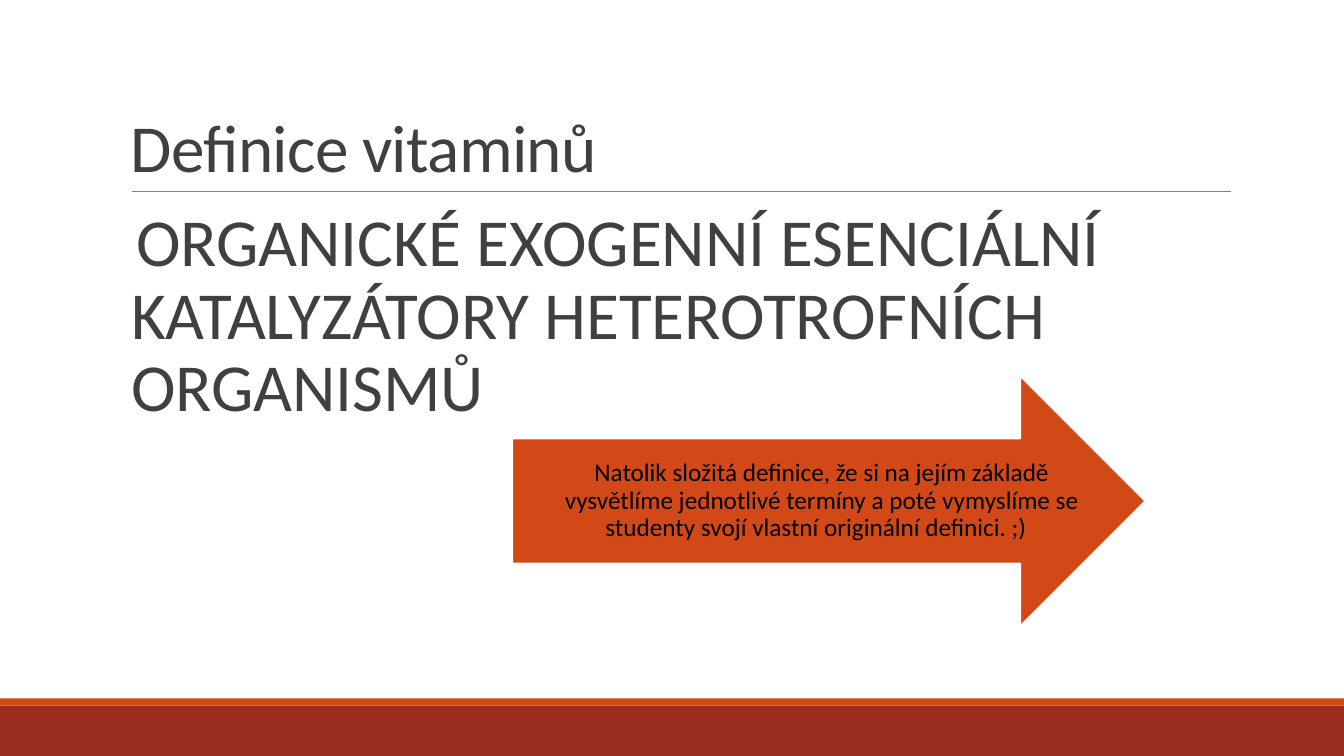
from lxml import etree
from pptx import Presentation, util as u
from pptx.dml.color import RGBColor
from pptx.enum import shapes, text
from pptx.oxml.ns import qn

WIDTH, HEIGHT = 13.33, 7.5
LEFT, COLUMN = 1.2, 11
RULE_Y = 1.9
BAND_TOP, STRIPE = 7, 0.07
ORANGE, DARK_RED, GREY = "D34817", "9B2D1F", "404040"

deck = Presentation()
deck.slide_width, deck.slide_height = u.Inches(WIDTH), u.Inches(HEIGHT)
page = deck.slides.add_slide(deck.slide_layouts[6])


def color(value):
    return RGBColor.from_string(value)


def add_text(place, wording, size, ink, anchor, insets, spacing):
    """Add a wrapped one-paragraph text box; return its paragraph and run."""
    box = page.shapes.add_textbox(*map(u.Inches, place))
    frame = box.text_frame
    frame.word_wrap = True
    frame.vertical_anchor = anchor
    side, edge = map(u.Inches, insets)
    frame.margin_left = frame.margin_right = side
    frame.margin_top = frame.margin_bottom = edge
    para = frame.paragraphs[0]
    para.line_spacing = spacing
    span = para.add_run()
    span.text = wording
    span.font.size = u.Pt(size)
    span.font.name = "Calibri"
    span.font.color.rgb = color(ink)
    return para, span


# Footer band with its stripe, and the arrow
rect, arrow = shapes.MSO_SHAPE.RECTANGLE, shapes.MSO_SHAPE.RIGHT_ARROW
for kind, place, fill, outline in (
    (rect, (0, BAND_TOP, WIDTH, HEIGHT - BAND_TOP), DARK_RED, None),
    (rect, (0, BAND_TOP - STRIPE, WIDTH, STRIPE), ORANGE, None),
    (arrow, (5.08, 3.73, 6.28, 2.48), ORANGE, "FFFFFF"),
):
    shape = page.shapes.add_shape(kind, *map(u.Inches, place))
    shape.shadow.inherit = False
    shape.fill.solid()
    shape.fill.fore_color.rgb = color(fill)
    if outline:
        shape.line.color.rgb = color(outline)
        shape.line.width = u.Pt(1.25)
    else:
        shape.line.fill.background()

# Rule under the title
rule = page.shapes.add_connector(
    shapes.MSO_CONNECTOR.STRAIGHT, *map(u.Inches, (1.31, RULE_Y, 12.21, RULE_Y)))
rule.line.color.rgb = color("808080")
rule.line.width = u.Pt(0.5)
etree.SubElement(rule._element.spPr, qn("a:effectLst"))

# Title
para, span = add_text((LEFT, 0.31, COLUMN, RULE_Y - 0.31), "Definice vitaminů",
                      48, GREY, text.MSO_ANCHOR.BOTTOM, (0.1, 0.05), 0.85)
span.font._element.set("spc", "-50")

# Definition, with a blank bullet and a hanging indent
para, span = add_text(
    (LEFT, 2.02, COLUMN, 4.4),
    "ORGANICKÉ EXOGENNÍ ESENCIÁLNÍ KATALYZÁTORY HETEROTROFNÍCH ORGANISMŮ",
    48, GREY, text.MSO_ANCHOR.TOP, (0, 0.05), 0.9)
para.space_before, para.space_after = u.Pt(12), u.Pt(2)
props = para._p.get_or_add_pPr()
props.set("marL", str(u.Inches(0.1)))
props.set("indent", str(-u.Inches(0.1)))
bullet_color = etree.SubElement(props, qn("a:buClr"))
etree.SubElement(bullet_color, qn("a:srgbClr"), val=ORANGE)
etree.SubElement(props, qn("a:buFont"), typeface="Calibri")
etree.SubElement(props, qn("a:buChar"), char=" ")

# Arrow text
para, span = add_text(
    (5.58, 4.35, 5.14, 1.24),
    "Natolik složitá definice, že si na jejím základě vysvětlíme jednotlivé "
    "termíny a poté vymyslíme se studenty svojí vlastní originální definici. ;)  ",
    18, "000000", text.MSO_ANCHOR.MIDDLE, (0, 0.2), 0.9)
para.alignment = text.PP_ALIGN.CENTER

deck.save("out.pptx")
